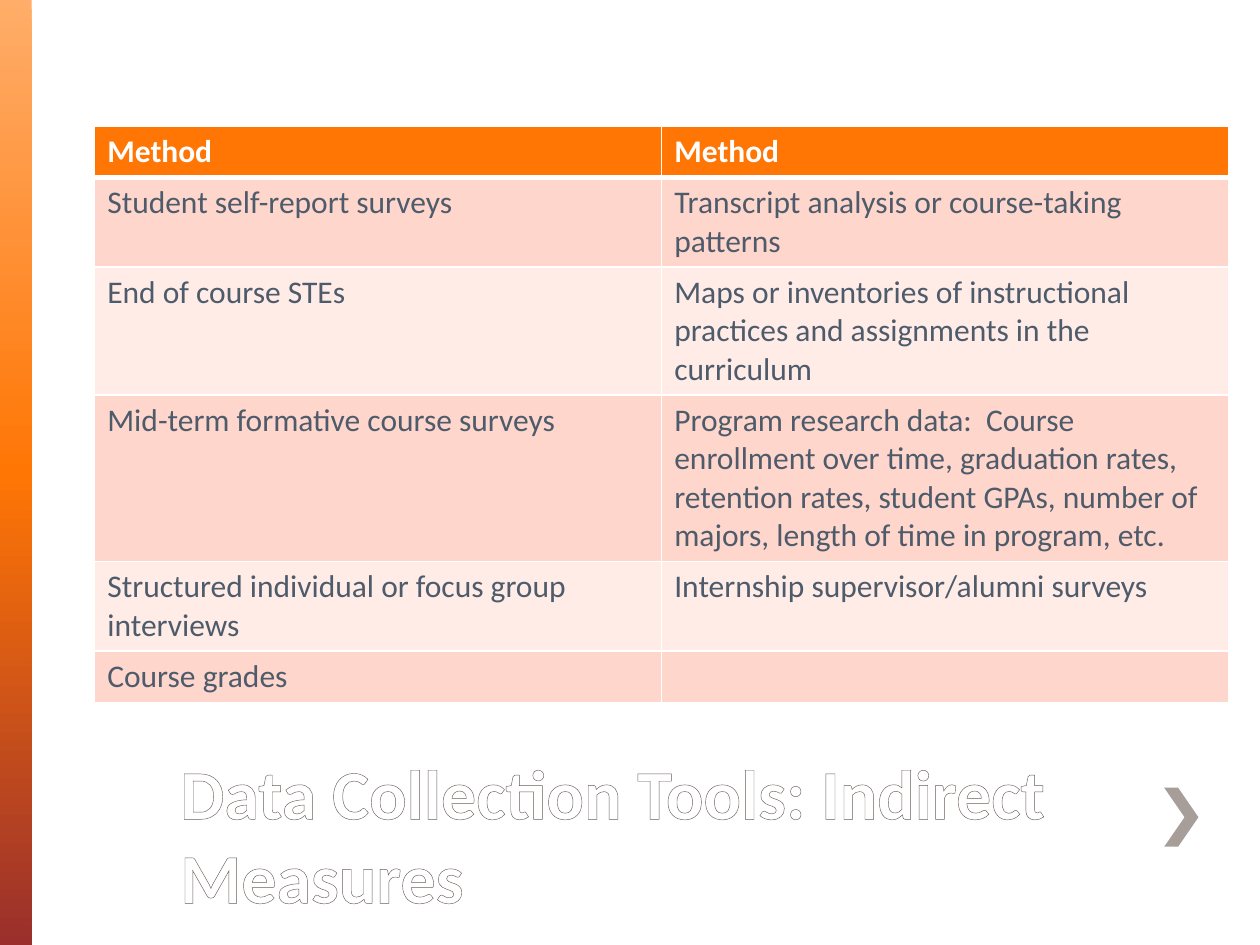
from typing import NamedTuple

import lxml.etree
import pptx
import pptx.dml.color
import pptx.enum.shapes
import pptx.enum.text
import pptx.oxml
import pptx.oxml.ns
import pptx.util

Cm = pptx.util.Cm
Pt = pptx.util.Pt
qn = pptx.oxml.ns.qn

HUES = {
    "white": "FFFFFF", "peach": "FFAD69", "orange": "FF7605",
    "brick": "9A2F2C", "taupe": "A79D99", "edge": "675D59",
    "slate": "4D5B6B", "pink": "FFD6CC", "pale": "FFECE7",
}


class Box(NamedTuple):
    left: float
    top: float
    width: float
    height: float

    def place(self) -> list:
        return [Cm(side) for side in self]


class Row(NamedTuple):
    first: str
    second: str


class Look(NamedTuple):
    fill: str
    text: str
    bold: bool
    top: float
    base: float


ROWS = [
    Row("Method", "Method"),
    Row("Student self-report surveys",
        "Transcript analysis or course-taking patterns"),
    Row("End of course STEs",
        "Maps or inventories of instructional practices and assignments "
        "in the curriculum"),
    Row("Mid-term formative course surveys",
        "Program research data:  Course enrollment over time, graduation "
        "rates, retention rates, student GPAs, number of majors, length of "
        "time in program, etc."),
    Row("Structured individual or focus group interviews",
        "Internship supervisor/alumni surveys"),
    Row("Course grades", ""),
]
HEAD = Look("orange", "white", True, 1, 3)
BANDS = [Look("pink", "slate", False, 1, 1), Look("pale", "slate", False, 1, 1)]


def color(name: str) -> pptx.dml.color.RGBColor:
    return pptx.dml.color.RGBColor.from_string(HUES[name])


def style(font, size: float, bold: bool, hue: str) -> None:
    for key, value in {"name": "Calibri", "size": Pt(size), "bold": bold}.items():
        setattr(font, key, value)
    font.color.rgb = color(hue)


def stroke(tag: str, width: float, hue: str):
    """Return a solid line element, for a cell side or a text outline."""
    line = lxml.etree.fromstring(
        f'<a:{tag} xmlns:a="{pptx.oxml.ns.nsuri("a")}" w="{Pt(width)}">'
        f'<a:solidFill><a:srgbClr val="{HUES[hue]}"/></a:solidFill></a:{tag}>')
    return pptx.oxml.parse_xml(lxml.etree.tostring(line))


def draw_bar(slide, box: Box, stops: dict[int, str]) -> None:
    bar = slide.shapes.add_shape(
        pptx.enum.shapes.MSO_SHAPE.RECTANGLE, *box.place())
    bar.shadow.inherit = False
    bar.line.fill.background()
    bar.fill.gradient()
    bar.fill.gradient_angle = 270
    group = bar._element.spPr.find(".//" + qn("a:gsLst"))
    group.clear()
    for spot, hue in stops.items():
        stop = lxml.etree.SubElement(group, qn("a:gs"), pos=str(spot * 1000))
        lxml.etree.SubElement(stop, qn("a:srgbClr"), val=HUES[hue])


def draw_arrow(slide, box: Box, arm: float, hue: str) -> None:
    left, top, width, height = box
    right, base, mid = left + width, top + height, top + height / 2
    spots = [(left + arm, top), (left, top), (right - arm, mid),
             (left, base), (left + arm, base), (right, mid)]
    first, *rest = [(Cm(x), Cm(y)) for x, y in spots]
    pen = slide.shapes.build_freeform(*first)
    pen.add_line_segments(rest, close=True)
    arrow = pen.convert_to_shape()
    arrow.shadow.inherit = False
    arrow.fill.solid()
    arrow.fill.fore_color.rgb = color(hue)
    arrow.line.fill.background()


def draw_title(slide, box: Box, text: str) -> None:
    title = slide.shapes.title
    title.left, title.top, title.width, title.height = box.place()
    frame = title.text_frame
    frame.text = text
    form = {
        "word_wrap": True,
        "auto_size": pptx.enum.text.MSO_AUTO_SIZE.NONE,
        "vertical_anchor": pptx.enum.text.MSO_ANCHOR.BOTTOM,
    }
    for key, value in form.items():
        setattr(frame, key, value)
    line = frame.paragraphs[0]
    line.alignment = pptx.enum.text.PP_ALIGN.LEFT
    run = line.runs[0]
    style(run.font, 40, True, "white")
    run._r.get_or_add_rPr().insert(0, stroke("ln", 1, "edge"))


def fill_cell(cell, text: str, look: Look) -> None:
    cell.text = text
    style(cell.text_frame.paragraphs[0].font, 18, look.bold, look.text)
    for run in cell.text_frame.paragraphs[0].runs:
        style(run.font, 18, look.bold, look.text)
    cell.fill.solid()
    cell.fill.fore_color.rgb = color(look.fill)
    sides = {"lnL": 1, "lnR": 1, "lnT": look.top, "lnB": look.base}
    for spot, (tag, width) in enumerate(sides.items()):
        cell._tc.get_or_add_tcPr().insert(spot, stroke(tag, width, "white"))


def draw_table(slide, box: Box, rows: list[Row]) -> None:
    grid = slide.shapes.add_table(len(rows), 2, *box.place()).table
    for r, row in enumerate(rows):
        look = BANDS[(r - 1) % 2] if r else HEAD
        if r == 1:
            look = look._replace(top=HEAD.base)
        for c, text in enumerate(row):
            fill_cell(grid.cell(r, c), text, look)


def main() -> None:
    deck = pptx.Presentation()
    deck.slide_width, deck.slide_height = Cm(25.4), Cm(19.05)
    slide = deck.slides.add_slide(deck.slide_layouts.get_by_name("Title Only"))
    for holder in list(slide.placeholders):
        if holder != slide.shapes.title:
            holder._element.getparent().remove(holder._element)

    # Side bar and arrow
    draw_bar(slide, Box(0, 0, 0.64, 19.05),
             {0: "peach", 50: "orange", 100: "brick"})
    draw_arrow(slide, Box(23.47, 15.88, 0.69, 1.19), 0.28, "taupe")

    # Title and table of methods
    draw_title(slide, Box(3.38, 13.34, 20.12, 5.28),
               "Data Collection Tools: Indirect Measures")
    draw_table(slide, Box(1.91, 2.54, 22.86, 6.24), ROWS)

    deck.save("out.pptx")


if __name__ == "__main__":
    main()
